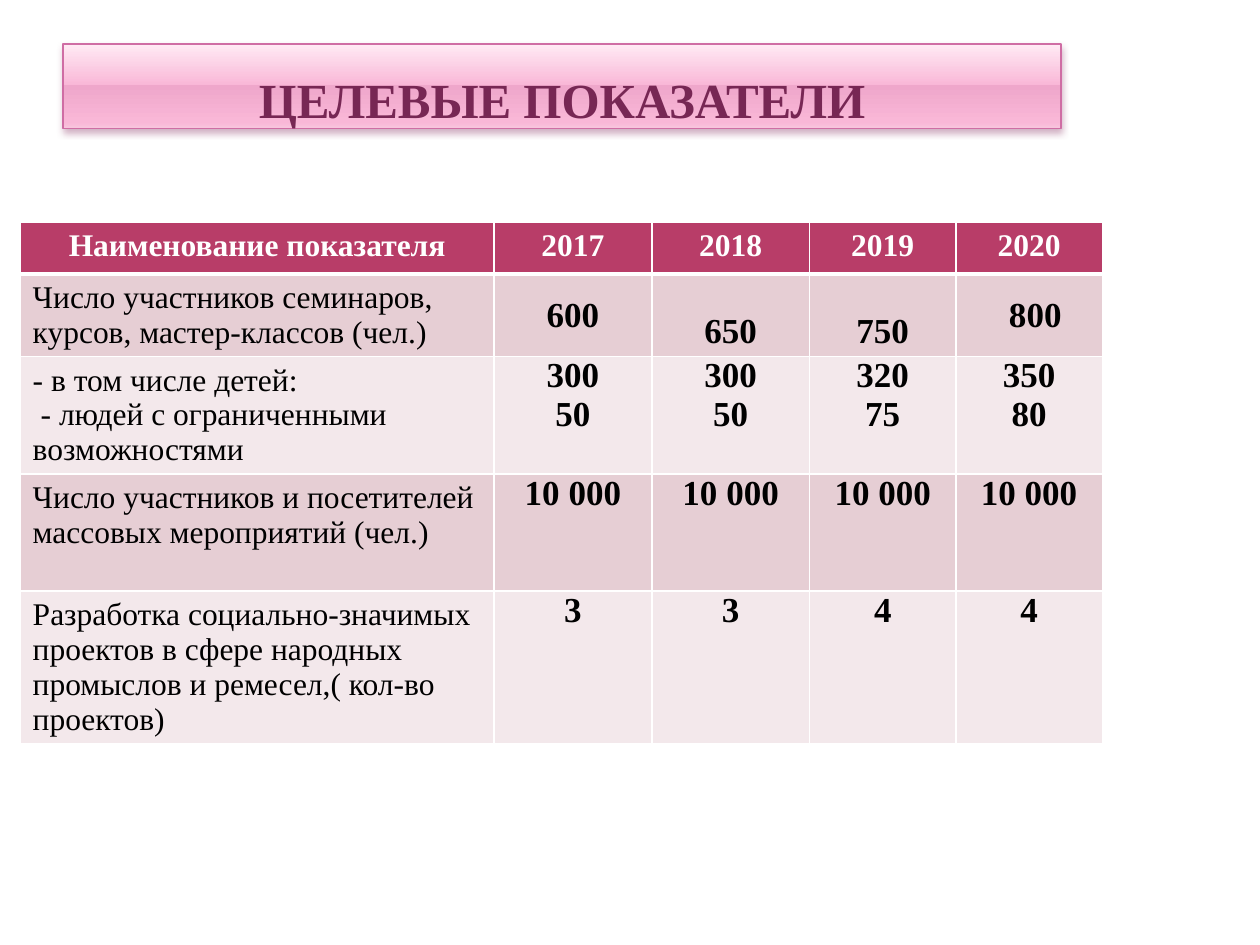
import lxml.etree
import pptx
import pptx.dml.color
import pptx.enum.text
import pptx.oxml
import pptx.oxml.ns
import pptx.util
from pptx.util import Cm, Pt

FONT = "Times New Roman"
COLORS = {
    "title": "772754", "title_line": "CF6DA4", "title_shadow": "893263",
    "header": "B83D68", "odd": "E6CED4", "even": "F3E8EB",
    "white": "FFFFFF", "black": "000000",
}
TITLE_STOPS = [(0, "FFEAF4"), (49, "F9B7D7"), (49, "EFA7CB"), (92, "F9B7D7"), (100, "F8C4DD")]
COLUMN_WIDTHS = [9.55, 3.18, 3.18, 2.95, 2.95]
ROW_HEIGHTS = [1.04, 1.65, 2.36, 2.36, 3.06]
ROWS = [
    ["Наименование показателя", "2017", "2018", "2019", "2020"],
    ["Число участников семинаров, курсов, мастер-классов (чел.)", "600", "650", "750", "800"],
    ["- в том числе детей:\n- людей с ограниченными возможностями",
     "300\n50", "300\n50", "320\n75", "350\n80"],
    ["Число участников и посетителей массовых мероприятий (чел.)"] + ["10 000"] * 4,
    ["Разработка социально-значимых проектов в сфере народных промыслов и ремесел,"
     "( кол-во проектов)", "3", "3", "4", "4"],
]
ALIGN = pptx.enum.text.PP_ALIGN
ANCHOR = pptx.enum.text.MSO_ANCHOR


def rgb(name):
    """Return the named palette colour."""
    return pptx.dml.color.RGBColor.from_string(COLORS[name])


def append_xml(parent, xml):
    """Append a DrawingML fragment to an element."""
    namespace = pptx.oxml.ns.nsdecls("a")
    wrapper = pptx.oxml.parse_xml(f"<a:wrapper {namespace}>{xml}</a:wrapper>")
    for child in list(wrapper):
        parent.append(child)


def format_font(paragraph, size, color, bold):
    """Apply the slide font to a paragraph."""
    font = paragraph.font
    font.name, font.size, font.bold = FONT, Pt(size), bold
    font.color.rgb = rgb(color)


def set_margins(frame, left, top, right, bottom):
    """Set the inner margins of a cell or text frame in centimetres."""
    frame.margin_left, frame.margin_top = Cm(left), Cm(top)
    frame.margin_right, frame.margin_bottom = Cm(right), Cm(bottom)


def build_title(slide, left, top, width, height):
    """Place the title on its glossy pink banner."""
    title = slide.shapes.title
    title.left, title.top, title.width, title.height = Cm(left), Cm(top), Cm(width), Cm(height)
    title.line.color.rgb = rgb("title_line")
    title.line.width = Pt(0.9)
    title.fill.gradient()
    gradient = title._element.spPr.find(pptx.oxml.ns.qn("a:gradFill"))
    for child in list(gradient):
        gradient.remove(child)
    stops = "".join(f'<a:gs pos="{position * 1000}"><a:srgbClr val="{color}"/></a:gs>'
                    for position, color in TITLE_STOPS)
    append_xml(gradient, f'<a:gsLst>{stops}</a:gsLst><a:lin ang="5400000" scaled="0"/>')
    append_xml(title._element.spPr,
               f'<a:effectLst><a:outerShdw blurRad="{Pt(4)}" dist="{Pt(2)}" dir="5400000" '
               f'rotWithShape="0"><a:srgbClr val="{COLORS["title_shadow"]}">'
               '<a:alpha val="38000"/></a:srgbClr></a:outerShdw></a:effectLst>')
    frame = title.text_frame
    frame.text = "ЦЕЛЕВЫЕ ПОКАЗАТЕЛИ"
    frame.word_wrap = True
    frame.auto_size = pptx.enum.text.MSO_AUTO_SIZE.NONE
    frame.vertical_anchor = ANCHOR.BOTTOM
    set_margins(frame, 0.13, 0, 0.13, 0)
    frame.paragraphs[0].alignment = ALIGN.CENTER
    format_font(frame.paragraphs[0], 28, "title", True)


def format_cell(cell, row, column):
    """Give a cell its borders, fill, margins and text style."""
    header, label = row == 0, column == 0
    properties = cell._tc.get_or_add_tcPr()
    widths = {"lnL": 1, "lnR": 1, "lnT": 3 if row == 1 else 1, "lnB": 3 if header else 1}
    for side, width in widths.items():
        append_xml(properties, f'<a:{side} w="{Pt(width)}"><a:solidFill>'
                   f'<a:srgbClr val="{COLORS["white"]}"/></a:solidFill></a:{side}>')
    cell.fill.solid()
    cell.fill.fore_color.rgb = rgb("header" if header else "odd" if row % 2 else "even")
    if header or label:
        set_margins(cell, 0.25, 0.13, 0.25, 0.13)
    else:
        set_margins(cell, 0.18, 0, 0.18, 0)
    for paragraph in cell.text_frame.paragraphs:
        paragraph.alignment = ALIGN.CENTER if header or not label else ALIGN.LEFT
        format_font(paragraph, 18 if header or label else 20,
                    "white" if header else "black", header or not label)


def build_table(slide, left, top):
    """Place the table of yearly indicators."""
    table = slide.shapes.add_table(
        len(ROWS), len(COLUMN_WIDTHS), Cm(left), Cm(top),
        Cm(sum(COLUMN_WIDTHS)), Cm(sum(ROW_HEIGHTS))).table
    for column, width in zip(table.columns, COLUMN_WIDTHS):
        column.width = Cm(width)
    for row, (height, texts) in enumerate(zip(ROW_HEIGHTS, ROWS)):
        table.rows[row].height = Cm(height)
        for column, text in enumerate(texts):
            cell = table.cell(row, column)
            cell.text = text
            format_cell(cell, row, column)
    for column in (1, 4):
        table.cell(1, column).vertical_anchor = ANCHOR.MIDDLE
    for column in (2, 3):
        table.cell(1, column).margin_top = Cm(0.78)
    last_total = table.cell(1, 4)
    last_total.margin_left = Cm(1.07)
    last_total.text_frame.paragraphs[0].alignment = ALIGN.LEFT
    second_group = table.cell(2, 0).text_frame.paragraphs[1]
    second_group._p.get_or_add_pPr().set("indent", str(Cm(0.16)))


def main():
    """Build and save the slide."""
    presentation = pptx.Presentation()
    presentation.slide_width, presentation.slide_height = Cm(25.4), Cm(19.05)
    slide = presentation.slides.add_slide(presentation.slide_layouts[5])
    build_title(slide, 1.27, 0.89, 20.12, 1.7)
    build_table(slide, 0.41, 4.48)
    presentation.save("out.pptx")


if __name__ == "__main__":
    main()
